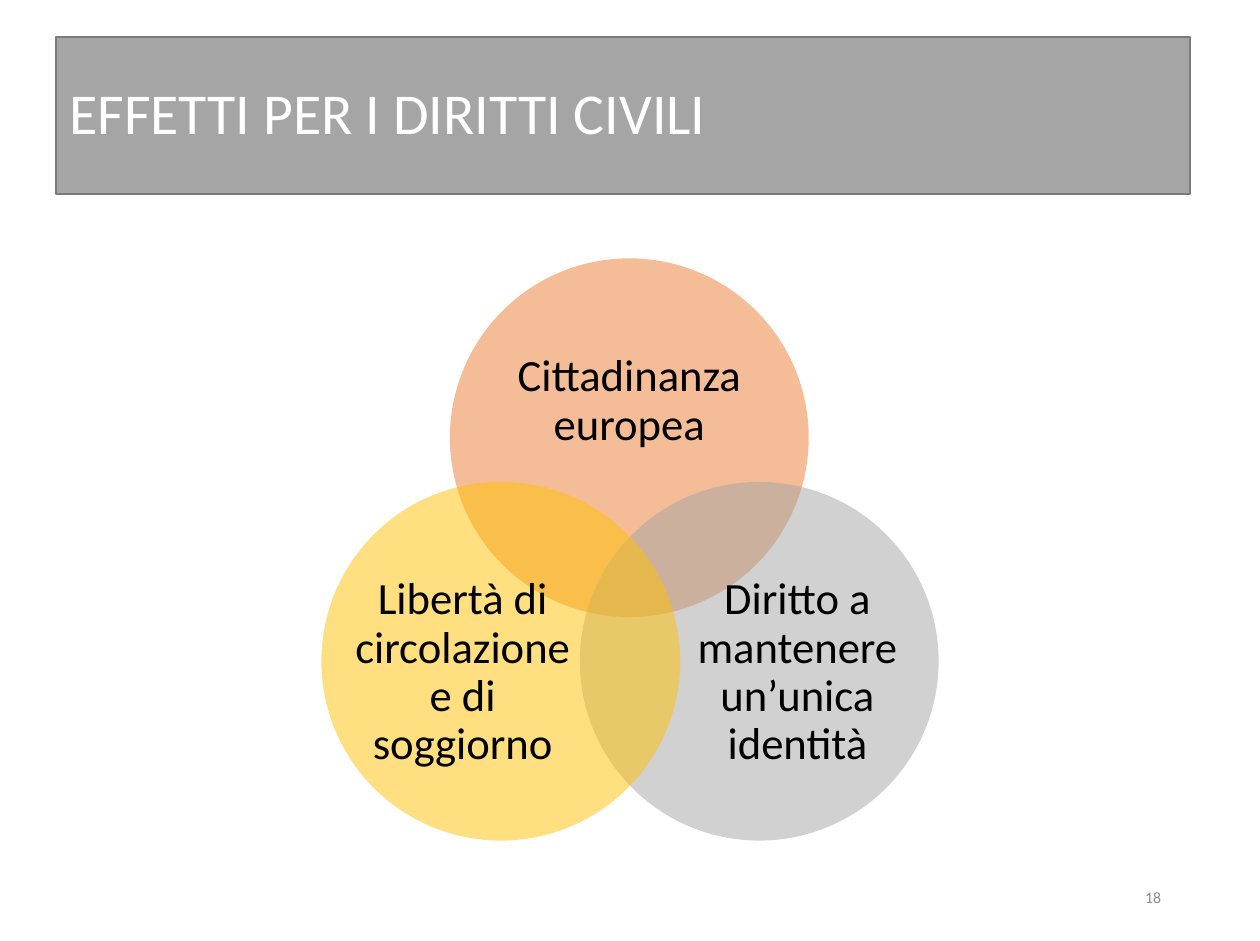
from pptx import Presentation
from pptx import util as u
from pptx.dml.color import RGBColor
from pptx.enum import shapes, text
from pptx.oxml.ns import qn
from lxml import etree

PX = 9144
WHITE = RGBColor(0xFF, 0xFF, 0xFF)
BLACK = RGBColor(0, 0, 0)
GRAY = RGBColor(0xA5, 0xA5, 0xA5)
EDGE = RGBColor(0x7A, 0x7A, 0x7A)
MUTED = RGBColor(0x8C, 0x8C, 0x8C)
ORANGE = RGBColor(0xED, 0x7D, 0x31)
GOLD = RGBColor(0xFF, 0xC0, 0x00)
SIDE = 268
ALIGN = text.PP_ALIGN


def emu(box):
    """Turn a box in px into EMU lengths."""
    return [u.Emu(n * PX) for n in box]


def write(shape, words, size, color, align, spacing=0.9, inset=None):
    """Set the words of a shape with their format."""
    frame = shape.text_frame
    form = {"word_wrap": True, "vertical_anchor": text.MSO_ANCHOR.MIDDLE}
    if inset is not None:
        for side in ("left", "top", "right", "bottom"):
            form["margin_" + side] = inset
    para = frame.paragraphs[0]
    run = para.add_run()
    run.text = words
    run.font.color.rgb = color
    for part, values in (
        (frame, form),
        (para, {"alignment": align, "line_spacing": spacing}),
        (run.font, {"size": u.Pt(size), "name": "Calibri"}),
    ):
        for key, value in values.items():
            setattr(part, key, value)


def draw(slide, kind, box, color):
    """Add a plain filled shape without shadow."""
    shape = slide.shapes.add_shape(kind, *emu(box))
    shape.shadow.inherit = False
    shape.fill.solid()
    shape.fill.fore_color.rgb = color
    return shape


def title(slide, box):
    """Place the title bar."""
    bar = draw(slide, shapes.MSO_SHAPE.RECTANGLE, box, GRAY)
    bar.line.color.rgb = EDGE
    bar.line.width = u.Pt(1)
    write(bar, "EFFETTI PER I DIRITTI CIVILI", 31.1, WHITE, ALIGN.JUSTIFY)


def venn(slide, box):
    """Place three see-through circles with their labels."""
    left, top, width, height = box
    right, low = left + width - SIDE, top + height - SIDE
    mid = (left + right) // 2
    sets = [
        (mid, top, ORANGE, "Cittadinanza europea", (36, 47, 196, 120)),
        (right, low, GRAY, "Diritto a mantenere un’unica identità",
         (82, 69, 161, 147)),
        (left, low, GOLD, "Libertà di circolazione e di soggiorno",
         (25, 69, 161, 147)),
    ]
    for x, y, color, words, (dx, dy, wide, high) in sets:
        disc = draw(slide, shapes.MSO_SHAPE.OVAL, (x, y, SIDE, SIDE), color)
        disc.line.fill.background()
        tint = disc._element.spPr.find(qn("a:solidFill"))[0]
        etree.SubElement(tint, qn("a:alpha"), val="50000")
        label = slide.shapes.add_textbox(*emu((x + dx, y + dy, wide, high)))
        write(label, words, 24, BLACK, ALIGN.CENTER, inset=0)


def number(slide, box):
    """Place the page number."""
    note = slide.shapes.add_textbox(*emu(box))
    write(note, "18", 8.5, MUTED, ALIGN.RIGHT, spacing=1.0)


def main():
    """Build and save the slide."""
    deck = Presentation()
    deck.slide_width, deck.slide_height = emu((941, 703))
    slide = deck.slides.add_slide(deck.slide_layouts[6])
    title(slide, (42, 28, 847, 117))
    venn(slide, (240, 193, 461, 435))
    number(slide, (665, 652, 212, 37))
    deck.save("out.pptx")


if __name__ == "__main__":
    main()
